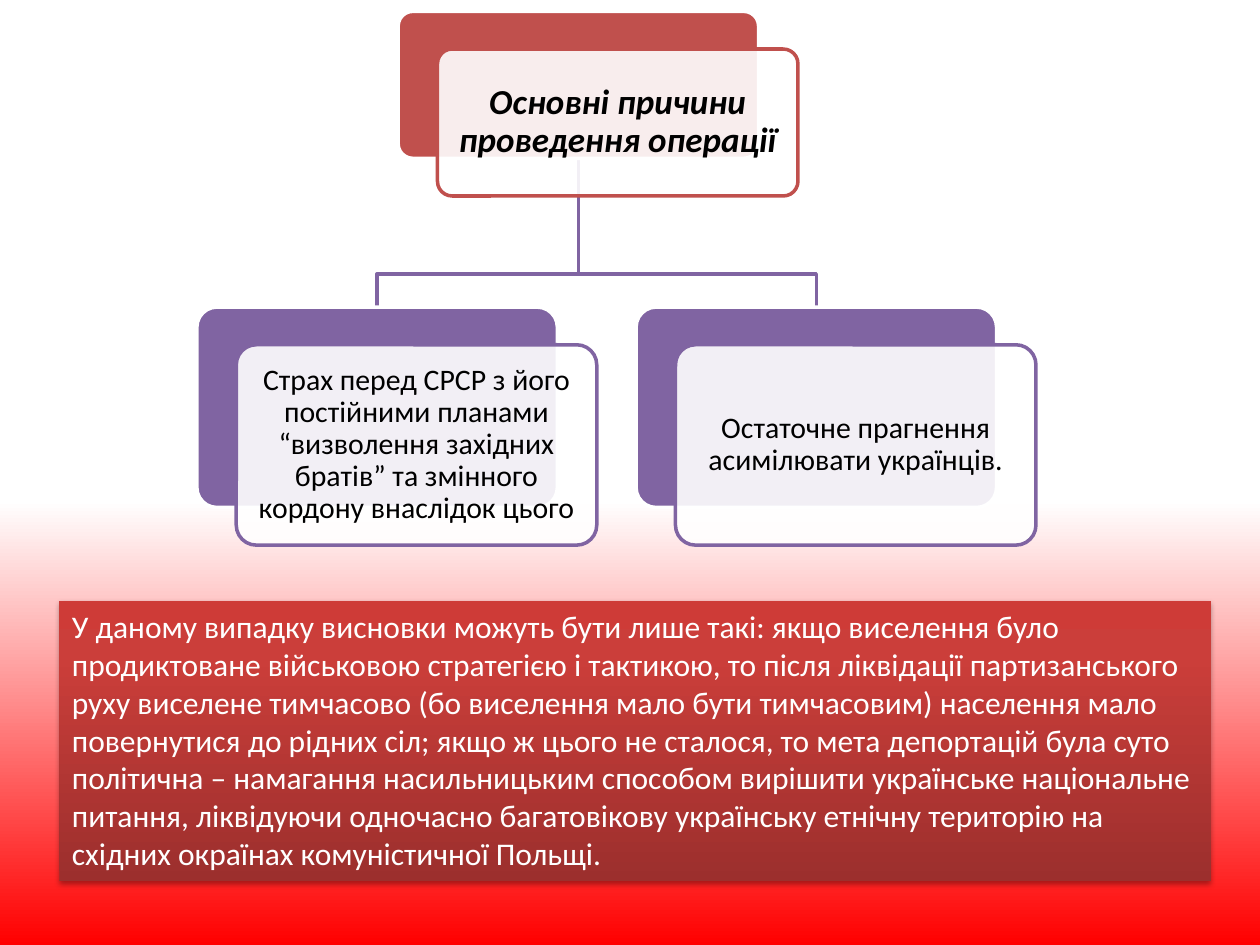
from lxml import etree
from pptx import Presentation
from pptx import util as u
from pptx.dml import color
from pptx.enum import shapes, text
from pptx.oxml import ns

COLORS = {"red": "C0504D", "purple": "8064A2", "white": "FFFFFF", "black": "000000"}
BACKDROP = [(0, "FF0000"), (47, "FFFFFF"), (100, "FFFFFF")]
PANEL = [(0, "9C2F2D"), (80, "CB3E3A"), (100, "CE3B37")]
CAUSE_FONT = {"name": "Calibri", "size": u.Pt(17)}
TOPIC_FONT = {"name": "Calibri", "size": u.Pt(20), "bold": True, "italic": True}
CONCLUSION_FONT = {"name": "Calibri", "size": u.Pt(18)}

TOPIC = "Основні причини проведення операції"
CAUSES = [
    "Страх перед СРСР з його постійними планами “визволення західних братів” "
    "та змінного кордону внаслідок цього",
    "Остаточне прагнення асимілювати українців.",
]
CONCLUSION = (
    "У даному випадку висновки можуть бути лише такі: якщо виселення було "
    "продиктоване військовою стратегією і тактикою, то після ліквідації "
    "партизанського руху виселене тимчасово (бо виселення мало бути тимчасовим) "
    "населення мало повернутися до рідних сіл; якщо ж цього не сталося, то мета "
    "депортацій була суто політична – намагання насильницьким способом вирішити "
    "українське національне питання, ліквідуючи одночасно багатовікову українську "
    "етнічну територію на східних окраїнах комуністичної Польщі."
)


def rgb(name):
    """Return the palette colour with this name."""
    return color.RGBColor.from_string(COLORS[name])


def add_child(parent, tag, **attributes):
    """Append a DrawingML element and return it."""
    values = {key: str(value) for key, value in attributes.items()}
    return etree.SubElement(parent, ns.qn(tag), values)


def paint_gradient(fill, owner, stops):
    """Fill with a gradient that runs from bottom to top."""
    fill.gradient()
    fill.gradient_angle = 90
    stop_list = owner.find(".//" + ns.qn("a:gsLst"))
    for old_stop in list(stop_list):
        stop_list.remove(old_stop)
    for position, value in stops:
        stop = add_child(stop_list, "a:gs", pos=position * 1000)
        add_child(stop, "a:srgbClr", val=value)


def outline(shape, name):
    """Give a shape a two-point line and no shadow."""
    shape.shadow.inherit = False
    shape.line.color.rgb = rgb(name)
    shape.line.width = u.Pt(2)


def write(shape, wording, font, ink, frame_format, paragraph_format):
    """Set the text of a shape and its formatting."""
    frame = shape.text_frame
    frame.text = wording
    paragraph = frame.paragraphs[0]
    for target, values in (
        (frame, frame_format),
        (paragraph, paragraph_format),
        (paragraph.font, font),
    ):
        for key, value in values.items():
            setattr(target, key, value)
    paragraph.font.color.rgb = rgb(ink)


def add_branch(slide, start, end, bend):
    """Draw an elbow line that turns at the height of the bend."""
    (x1, y1), (x2, y2) = start, end
    corners = [(x1, bend), (x2, bend), (x2, y2)]
    builder = slide.shapes.build_freeform(u.Pt(x1), u.Pt(y1))
    builder.add_line_segments([(u.Pt(x), u.Pt(y)) for x, y in corners], close=False)
    branch = builder.convert_to_shape()
    branch.fill.background()
    outline(branch, "purple")


def add_node(slide, box, accent, wording, font):
    """Draw a coloured plate with a translucent text card shifted over it."""
    left, top, width, height = box
    layers = [(0, 0, accent, "white"), (22.5, 21.5, "white", accent)]
    for dx, dy, fill, edge in layers:
        card = slide.shapes.add_shape(
            shapes.MSO_SHAPE.ROUNDED_RECTANGLE,
            u.Pt(left + dx), u.Pt(top + dy), u.Pt(width), u.Pt(height),
        )
        card.adjustments[0] = 0.1
        card.fill.solid()
        card.fill.fore_color.rgb = rgb(fill)
        outline(card, edge)
    tint = card.element.spPr.find(ns.qn("a:solidFill"))[0]
    add_child(tint, "a:alpha", val=90000)
    frame_format = {"word_wrap": True, "vertical_anchor": text.MSO_ANCHOR.MIDDLE}
    for side in ("left", "right", "top", "bottom"):
        frame_format["margin_" + side] = u.Pt(8.5)
    paragraph_format = {"alignment": text.PP_ALIGN.CENTER, "line_spacing": 0.9}
    write(card, wording, font, "black", frame_format, paragraph_format)


def add_hierarchy(slide, box):
    """Draw the topic above its causes inside the box."""
    left, top, width, height = box
    node_width, topic_height, cause_height = 206, 84, 114.5
    topic_left, cause_top = left + 115, top + 169
    step = 251
    topic_foot = (topic_left + node_width / 2, top + topic_height)
    cause_lefts = [left + step * i for i in range(len(CAUSES))]
    for cause_left in reversed(cause_lefts):
        cause_head = (cause_left + node_width / 2, cause_top)
        add_branch(slide, topic_foot, cause_head, cause_top - 19)
    add_node(slide, (topic_left, top, node_width, topic_height), "red", TOPIC, TOPIC_FONT)
    for cause_left, cause in zip(cause_lefts, CAUSES):
        cause_box = (cause_left, cause_top, node_width, cause_height)
        add_node(slide, cause_box, "purple", cause, CAUSE_FONT)


def add_conclusion(slide, box):
    """Draw the shaded panel with the conclusion."""
    panel = slide.shapes.add_shape(shapes.MSO_SHAPE.RECTANGLE, *map(u.Pt, box))
    properties = panel.element.spPr
    paint_gradient(panel.fill, properties, PANEL)
    panel.line.fill.background()
    panel.shadow.inherit = False
    shadow = add_child(
        properties.find(ns.qn("a:effectLst")), "a:outerShdw",
        blurRad=u.Pt(3.1), dist=u.Pt(1.8), dir=5400000, rotWithShape=0,
    )
    shade = add_child(shadow, "a:srgbClr", val=COLORS["black"])
    add_child(shade, "a:alpha", val=35000)
    frame_format = {
        "word_wrap": True,
        "vertical_anchor": text.MSO_ANCHOR.TOP,
        "auto_size": text.MSO_AUTO_SIZE.SHAPE_TO_FIT_TEXT,
    }
    paragraph_format = {"alignment": text.PP_ALIGN.LEFT}
    write(panel, CONCLUSION, CONCLUSION_FONT, "white", frame_format, paragraph_format)


def main():
    """Build the slide and save it."""
    deck = Presentation()
    deck.slide_width, deck.slide_height = u.Pt(720), u.Pt(540)
    slide = deck.slides.add_slide(deck.slide_layouts[6])
    paint_gradient(slide.background.fill, slide.element, BACKDROP)
    add_hierarchy(slide, (112.5, 6.5, 480, 305))
    add_conclusion(slide, (34, 343.5, 658, 160))
    deck.save("out.pptx")


if __name__ == "__main__":
    main()
